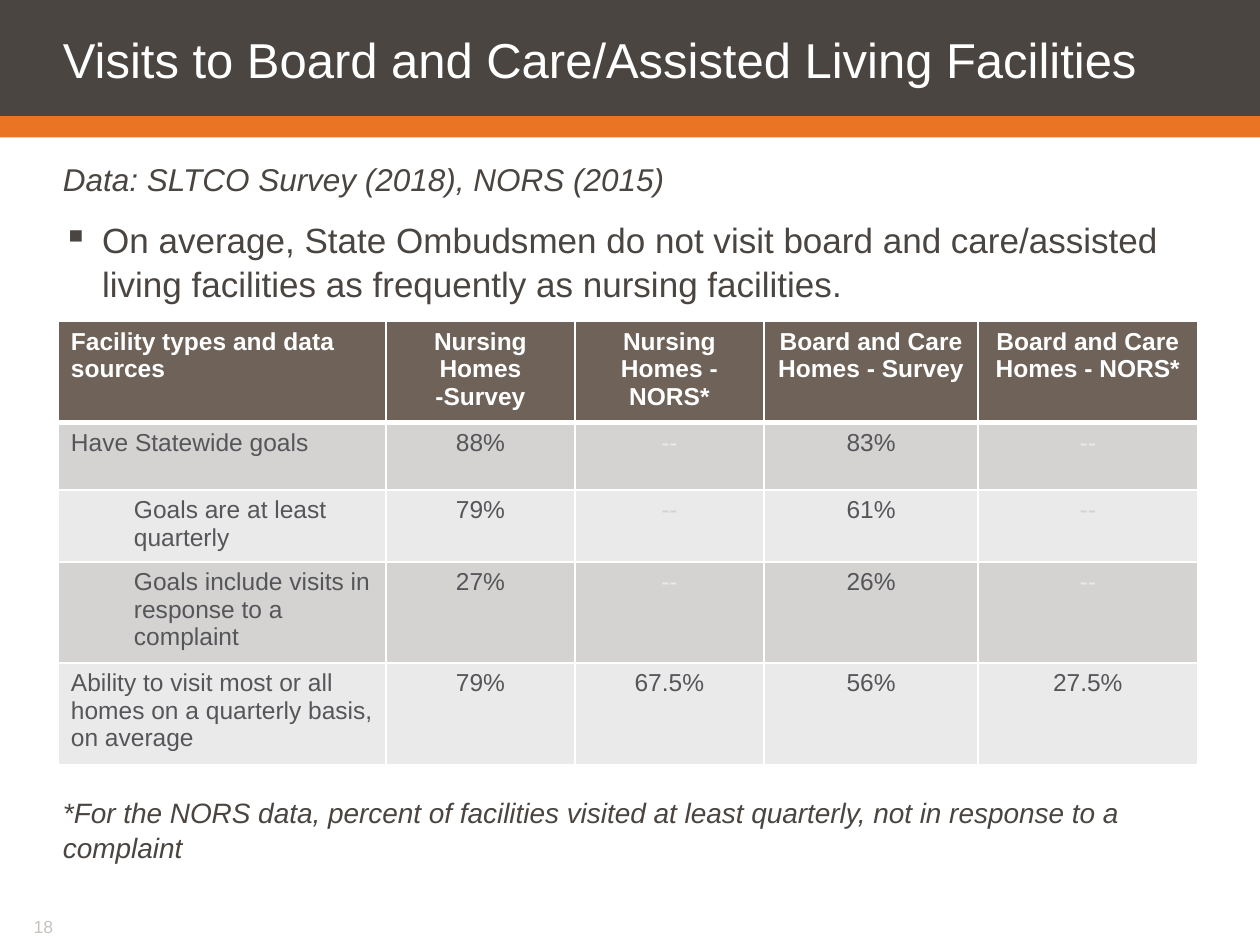
from dataclasses import dataclass

from lxml import etree
from pptx import Presentation
from pptx.dml.color import RGBColor
from pptx.enum.shapes import MSO_SHAPE
from pptx.enum.text import MSO_ANCHOR, PP_ALIGN
from pptx.oxml.ns import qn
from pptx.util import Cm, Pt

RECT = MSO_SHAPE.RECTANGLE
TOP, MIDDLE = MSO_ANCHOR.TOP, MSO_ANCHOR.MIDDLE
LEFT, CENTER = PP_ALIGN.LEFT, PP_ALIGN.CENTER

FONT = "Arial"
WHITE, DARK, ORANGE, PALE = "FFFFFF", "4A4541", "E87424", "C8C2BF"
HEADER, CELL_TEXT = "6E6259", "55565A"
BANDS = ("D5D3D1", "EBEAEA")
NO_DATA = "--"


@dataclass
class Bar:
    top: float
    height: float
    color: str


@dataclass
class TextBlock:
    text: str
    left: float
    top: float
    width: float
    height: float
    size: float
    color: str = DARK
    italic: bool = False
    insets: tuple[float, float, float, float] = (0, 0.13, 0, 0.13)
    anchor: MSO_ANCHOR = TOP
    spacing: float | Pt = 1.05
    bullet: str = ""
    wrap: bool = True


@dataclass
class Row:
    label: str
    values: tuple[str, ...]
    height: float
    indent: float = 0


BARS = [Bar(0, 2.34, DARK), Bar(2.34, 0.43, ORANGE)]

BLOCKS = [
    TextBlock("18", 0.43, 18.47, 4.88, 0.46, 10, PALE,
              insets=(0.25, 0, 0.25, 0.13), spacing=1.0, wrap=False),
    TextBlock("Visits to Board and Care/Assisted Living Facilities",
              0, 0, 25.4, 2.34, 28, WHITE,
              insets=(1.27, 0.25, 0.25, 0), anchor=MIDDLE, spacing=Pt(28)),
    TextBlock("Data: SLTCO Survey (2018), NORS (2015)",
              0, 3.05, 25.4, 0.89, 18, italic=True, insets=(1.27, 0.13, 0, 0.13)),
    TextBlock("On average, State Ombudsmen do not visit board and care/assisted "
              "living facilities as frequently as nursing facilities.",
              1.27, 4.24, 22.86, 2.1, 20, bullet="▪"),
    TextBlock("*For the NORS data, percent of facilities visited at least quarterly, "
              "not in response to a complaint",
              1.27, 15.88, 22.86, 1.78, 16, italic=True),
]

COLUMN_WIDTHS = (6.6, 3.81, 3.81, 4.32, 4.42)
ROWS = [
    Row("Facility types and data sources",
        ("Nursing Homes -Survey", "Nursing Homes - NORS*",
         "Board and Care Homes - Survey", "Board and Care Homes - NORS*"), 1.92),
    Row("Have Statewide goals", ("88%", NO_DATA, "83%", NO_DATA), 1.36),
    Row("Goals are at least quarterly", ("79%", NO_DATA, "61%", NO_DATA), 1.36, 1.27),
    Row("Goals include visits in response to a complaint",
        ("27%", NO_DATA, "26%", NO_DATA), 1.92, 1.27),
    Row("Ability to visit most or all homes on a quarterly basis, on average",
        ("79%", "67.5%", "56%", "27.5%"), 1.92),
]


def rgb(color: str) -> RGBColor:
    return RGBColor.from_string(color)


def style_runs(p, size: float, color: str, bold: bool = False, italic: bool = False) -> None:
    for r in p.runs:
        r.font.name = FONT
        r.font.size = Pt(size)
        r.font.bold = bold
        r.font.italic = italic
        r.font.color.rgb = rgb(color)


def set_indent(p, margin: float, first: float = 0) -> None:
    pPr = p._p.get_or_add_pPr()
    pPr.set("marL", str(Cm(margin)))
    pPr.set("indent", str(Cm(first)))


def draw_bar(s, bar: Bar) -> None:
    sp = s.shapes.add_shape(RECT, 0, Cm(bar.top), Cm(25.4), Cm(bar.height))
    sp.shadow.inherit = False
    sp.fill.solid()
    sp.fill.fore_color.rgb = rgb(bar.color)
    sp.line.fill.background()


def draw_text(s, block: TextBlock) -> None:
    sp = s.shapes.add_textbox(Cm(block.left), Cm(block.top), Cm(block.width), Cm(block.height))
    tf = sp.text_frame
    tf.word_wrap = block.wrap
    tf.vertical_anchor = block.anchor
    tf.margin_left, tf.margin_top, tf.margin_right, tf.margin_bottom = map(Cm, block.insets)
    tf.text = block.text
    p = tf.paragraphs[0]
    p.alignment = LEFT
    p.line_spacing = block.spacing
    if block.bullet:
        set_indent(p, 0.79, -0.79)
        bullet = etree.SubElement(p._p.get_or_add_pPr(), qn("a:buChar"))
        bullet.set("char", block.bullet)
    style_runs(p, block.size, block.color, italic=block.italic)


def add_borders(cell, bottom: float) -> None:
    tcPr = cell._tc.get_or_add_tcPr()
    for side, width in (("L", 1), ("R", 1), ("T", 1), ("B", bottom)):
        ln = etree.SubElement(tcPr, qn(f"a:ln{side}"), w=str(Pt(width)))
        fill = etree.SubElement(ln, qn("a:solidFill"))
        etree.SubElement(fill, qn("a:srgbClr"), val=WHITE)


def draw_cell(cell, text: str, row_index: int, is_label: bool, indent: float) -> None:
    is_header = row_index == 0
    band, other_band = BANDS[(row_index - 1) % 2], BANDS[row_index % 2]
    add_borders(cell, 3 if is_header else 1)
    cell.fill.solid()
    cell.fill.fore_color.rgb = rgb(HEADER if is_header else band)
    cell.margin_left = cell.margin_right = Cm(0.25)
    cell.margin_top = cell.margin_bottom = Cm(0.13)
    cell.text_frame.text = text
    p = cell.text_frame.paragraphs[0]
    p.alignment = LEFT if is_label else CENTER
    if is_label and indent:
        set_indent(p, indent)
    color = WHITE if is_header else other_band if text == NO_DATA else CELL_TEXT
    style_runs(p, 14, color, bold=is_header)


def draw_table(s, rows: list[Row]) -> None:
    height = sum(row.height for row in rows)
    table = s.shapes.add_table(len(rows), len(COLUMN_WIDTHS), Cm(1.18), Cm(6.48),
                               Cm(sum(COLUMN_WIDTHS)), Cm(height)).table
    for column, width in zip(table.columns, COLUMN_WIDTHS):
        column.width = Cm(width)
    for i, row in enumerate(rows):
        table.rows[i].height = Cm(row.height)
        for j, text in enumerate((row.label, *row.values)):
            draw_cell(table.cell(i, j), text, i, j == 0, row.indent)


def main() -> None:
    prs = Presentation()
    prs.slide_width, prs.slide_height = Cm(25.4), Cm(19.05)
    s = prs.slides.add_slide(prs.slide_layouts[6])
    for bar in BARS:
        draw_bar(s, bar)
    for block in BLOCKS:
        draw_text(s, block)
    draw_table(s, ROWS)
    prs.save("out.pptx")


if __name__ == "__main__":
    main()
